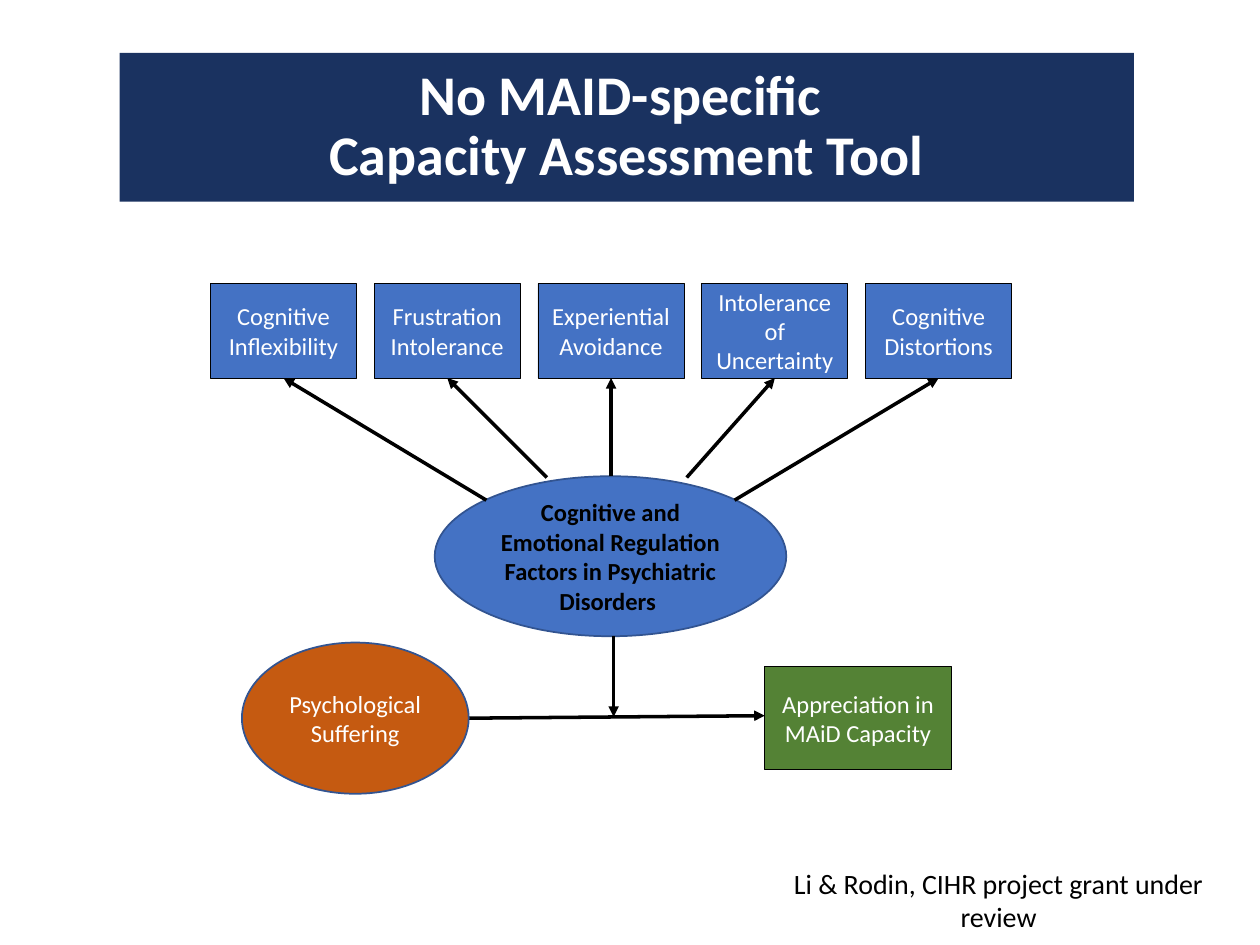
from pptx import Presentation
from pptx.dml.color import RGBColor
from pptx.enum.shapes import MSO_CONNECTOR, MSO_SHAPE
from pptx.enum.text import MSO_ANCHOR, PP_ALIGN
from pptx.oxml.ns import qn
from pptx.util import Inches, Pt
from lxml.etree import SubElement

COLORS = {"navy": "1A3260", "blue": "4472C4", "edge": "325491", "green": "548235",
          "orange": "C55A11", "black": "000000", "white": "FFFFFF"}
TITLE = ["No MAID-specific ", "Capacity Assessment Tool"]
FACTORS = [["Cognitive Inflexibility"], ["Frustration Intolerance"],
           ["Experiential", "Avoidance"], ["Intolerance of Uncertainty"],
           ["Cognitive Distortions"]]
CORE = ["Cognitive and Emotional Regulation Factors in Psychiatric Disorders "]
SOURCE = ["Li & Rodin, CIHR project grant under review"]

LEFT, TOP, WIDE, HIGH, STEP = 1.67, 2.25, 1.16, 0.75, 1.3
STARTS = [(3.86, 3.97), (4.34, 3.79), (4.85, 3.78), (5.45, 3.79), (5.83, 3.97)]
LINKS = [((4.87, 5.05), (4.87, 5.69)), ((3.71, 5.7), (6.07, 5.68))]


def color(name):
    return RGBColor.from_string(COLORS[name])


def write(shape, lines, size=14, ink="white", bold=False, space=None):
    frame = shape.text_frame
    frame.vertical_anchor = MSO_ANCHOR.MIDDLE
    for i, line in enumerate(lines):
        para = frame.add_paragraph() if i else frame.paragraphs[0]
        para.alignment = PP_ALIGN.CENTER
        para.line_spacing = space
        run = para.add_run()
        run.text = line
        run.font.name = "Calibri"
        run.font.size = Pt(size)
        run.font.bold = bold
        run.font.color.rgb = color(ink)


def add_box(slide, kind, place, fill, lines, edge=None, width=0.5, **style):
    shape = slide.shapes.add_shape(kind, *map(Inches, place))
    shape.shadow.inherit = False
    shape.fill.solid()
    shape.fill.fore_color.rgb = color(fill)
    if edge:
        shape.line.color.rgb = color(edge)
        shape.line.width = Pt(width)
    else:
        shape.line.fill.background()
    shape.text_frame.word_wrap = True
    write(shape, lines, **style)


def add_arrow(slide, start, end):
    arrow = slide.shapes.add_connector(MSO_CONNECTOR.STRAIGHT, *map(Inches, start + end))
    arrow.line.color.rgb = color("black")
    arrow.line.width = Pt(2)
    SubElement(arrow.line._get_or_add_ln(), qn("a:tailEnd"), type="triangle")
    SubElement(arrow._element.spPr, qn("a:effectLst"))


def main():
    deck = Presentation()
    deck.slide_width, deck.slide_height = Inches(10), Inches(7.5)
    slide = deck.slides.add_slide(deck.slide_layouts[6])
    rect, oval = MSO_SHAPE.RECTANGLE, MSO_SHAPE.OVAL

    add_box(slide, rect, (0.95, 0.42, 8.05, 1.18), "navy", TITLE,
            size=32, bold=True, space=0.9)
    add_box(slide, oval, (3.45, 3.78, 2.79, 1.27), "blue", CORE,
            "edge", 1, ink="black", bold=True)
    add_box(slide, rect, (6.07, 5.29, 1.48, 0.82), "green",
            ["Appreciation in MAiD Capacity"], "black")

    for i, (lines, start) in enumerate(zip(FACTORS, STARTS)):
        x = LEFT + i * STEP
        add_box(slide, rect, (x, TOP, WIDE, HIGH), "blue", lines, "black")
        add_arrow(slide, start, (x + WIDE / 2, TOP + HIGH))
    for start, end in LINKS:
        add_arrow(slide, start, end)

    add_box(slide, oval, (1.92, 5.1, 1.8, 1.2), "orange",
            ["Psychological Suffering"], "edge", 1)

    note = slide.shapes.add_textbox(*map(Inches, (5.92, 6.95, 4.01, 0.38)))
    frame = note.text_frame
    frame.word_wrap = False
    frame.margin_left = frame.margin_right = Inches(0.06)
    frame.margin_top = frame.margin_bottom = Inches(0.06)
    write(note, SOURCE, size=16, ink="black")

    deck.save("out.pptx")


if __name__ == "__main__":
    main()
